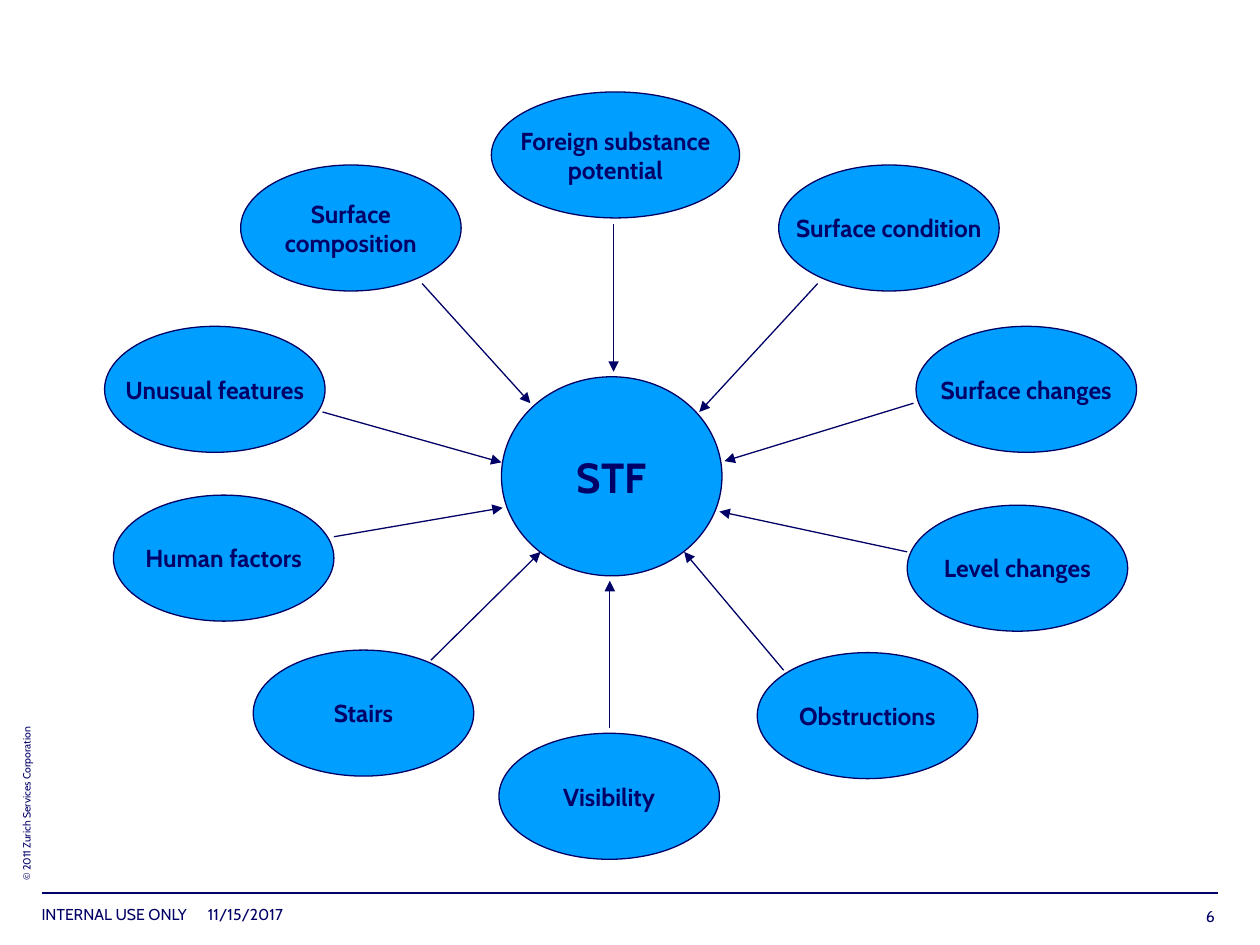
from dataclasses import dataclass

from pptx import Presentation
from pptx.dml.color import RGBColor
from pptx.enum.shapes import MSO_CONNECTOR, MSO_SHAPE
from pptx.enum.text import MSO_ANCHOR, PP_ALIGN
from pptx.oxml.ns import qn
from pptx.util import Inches, Pt
from lxml.etree import SubElement


@dataclass(frozen=True)
class Theme:
    navy: RGBColor = RGBColor(0x00, 0x00, 0x66)
    blue: RGBColor = RGBColor(0x00, 0x9E, 0xFE)
    font: str = "Cabin"
    hub: int = 24
    label: int = 14
    foot: int = 9
    legal: int = 6
    thin: float = 0.75
    rule: float = 1


THEME = Theme()
WIDTH, HEIGHT = 1.75, 1

# label, left, top, width, arrow start, arrow end
FACTORS = [
    ("Foreign substance\npotential", 3.9, 0.73, 1.97, (4.87, 1.78), (4.87, 2.95)),
    ("Surface condition", 6.18, 1.31, WIDTH, (6.49, 2.25), (5.55, 3.27)),
    ("Surface changes", 7.27, 2.59, WIDTH, (7.25, 3.2), (5.75, 3.66)),
    ("Level changes", 7.2, 4.01, WIDTH, (7.2, 4.38), (5.71, 4.06)),
    ("Obstructions", 6.01, 5.18, WIDTH, (6.22, 5.32), (5.43, 4.38)),
    ("Visibility", 3.96, 5.82, WIDTH, (4.84, 5.78), (4.84, 4.61)),
    ("Stairs", 2.01, 5.16, WIDTH, (3.42, 5.24), (4.29, 4.38)),
    ("Human factors", 0.9, 3.93, WIDTH, (2.65, 4.26), (3.99, 4.03)),
    ("Unusual features", 0.83, 2.59, WIDTH, (2.56, 3.27), (3.98, 3.67)),
    ("Surface\ncomposition", 1.91, 1.31, WIDTH, (3.35, 2.25), (4.21, 3.2)),
]


def write(frame, text, size, align, bold=False):
    frame.text = text
    for para in frame.paragraphs:
        para.alignment = align
        for run in para.runs:
            font = run.font
            font.name = THEME.font
            font.size = Pt(size)
            font.bold = bold
            font.color.rgb = THEME.navy


def add_oval(slide, text, box, size):
    oval = slide.shapes.add_shape(MSO_SHAPE.OVAL, *map(Inches, box))
    oval.shadow.inherit = False
    oval.fill.solid()
    oval.fill.fore_color.rgb = THEME.blue
    oval.line.color.rgb = THEME.navy
    oval.line.width = Pt(THEME.thin)
    frame = oval.text_frame
    frame.word_wrap = False
    frame.vertical_anchor = MSO_ANCHOR.MIDDLE
    write(frame, text, size, PP_ALIGN.CENTER, bold=True)


def add_line(slide, start, end, width, arrow=False):
    line = slide.shapes.add_connector(
        MSO_CONNECTOR.STRAIGHT, *map(Inches, (*start, *end)))
    line.line.color.rgb = THEME.navy
    line.line.width = Pt(width)
    if arrow:
        SubElement(line.line._get_or_add_ln(), qn("a:tailEnd"), type="triangle")
    SubElement(line._element.spPr, qn("a:effectLst"))


def add_note(slide, text, box, size, align=PP_ALIGN.LEFT,
             anchor=MSO_ANCHOR.TOP, wrap=False, upright=False):
    """Add a text box without margins; upright text reads from bottom to top."""
    frame = slide.shapes.add_textbox(*map(Inches, box)).text_frame
    frame.margin_left = frame.margin_right = 0
    frame.margin_top = frame.margin_bottom = 0
    frame.word_wrap = wrap
    frame.vertical_anchor = anchor
    if upright:
        frame._txBody.bodyPr.set("vert", "vert270")
    write(frame, text, size, align)


def add_footer(slide):
    add_note(slide, "© 2011 Zurich Services Corporation",
             (0.16, 5.62, 0.1, 1.37), THEME.legal, upright=True)
    add_line(slide, (0.33, 7.09), (9.67, 7.09), THEME.rule)
    add_note(slide, "INTERNAL USE ONLY", (0.33, 7.18, 1.26, 0.15), THEME.foot)
    add_note(slide, "11/15/2017", (1.65, 7.18, 1.18, 0.17), THEME.foot, wrap=True)
    add_note(slide, "6", (9.25, 7.18, 0.39, 0.17), THEME.foot,
             PP_ALIGN.RIGHT, MSO_ANCHOR.BOTTOM, wrap=True)


def main():
    deck = Presentation()
    deck.slide_width, deck.slide_height = Inches(10), Inches(7.5)
    slide = deck.slides.add_slide(deck.slide_layouts.get_by_name("Blank"))
    add_footer(slide)
    add_oval(slide, "STF", (3.98, 2.99, WIDTH, 1.58), THEME.hub)
    for text, left, top, width, start, end in FACTORS:
        add_oval(slide, text, (left, top, width, HEIGHT), THEME.label)
        add_line(slide, start, end, THEME.thin, arrow=True)
    deck.save("out.pptx")


if __name__ == "__main__":
    main()
